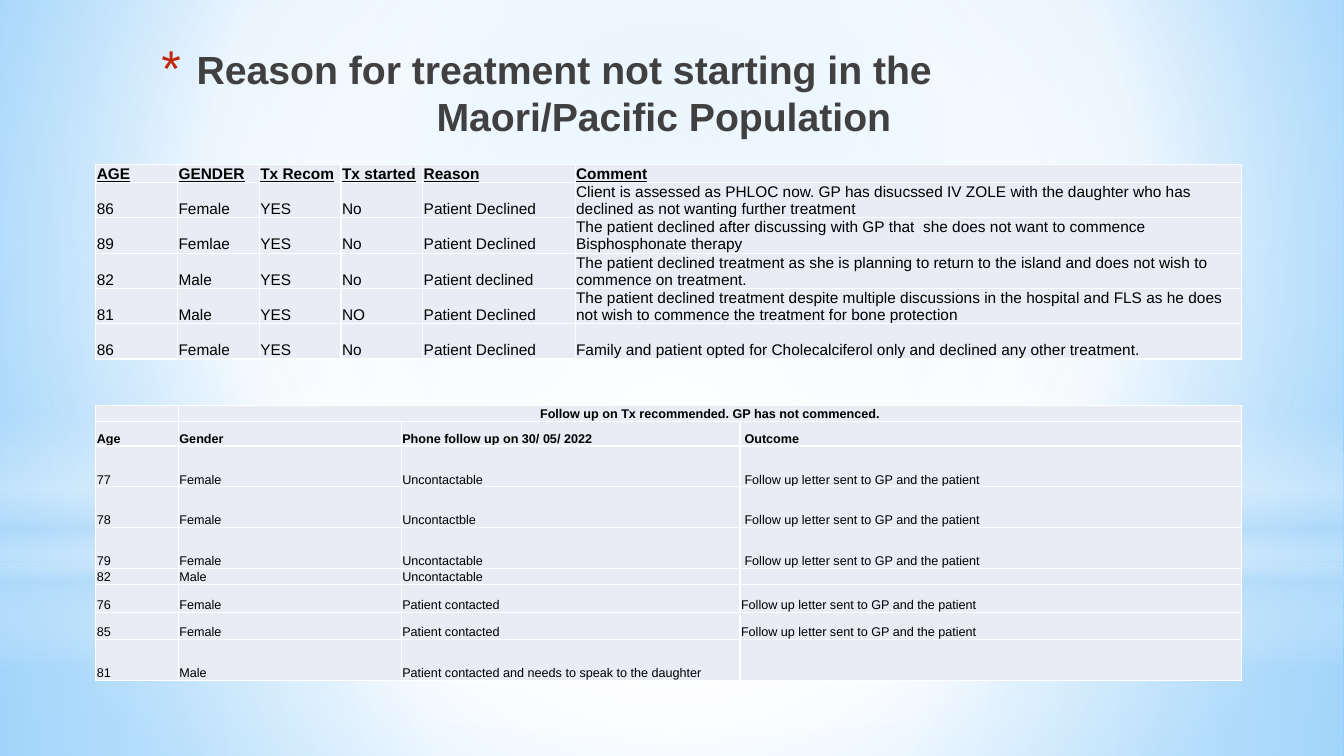
import pptx
import pptx.util
import pptx.dml.color
import pptx.enum.shapes
import pptx.enum.text
import pptx.oxml
import pptx.oxml.ns

COLORS = {"ink": "000000", "title": "404040", "bullet": "C3260C", "cell": "E9EBF5",
          "white": "FFFFFF", "pale": "B4DCFA", "sky": "9ED5FF", "blue": "5BB9FF"}
FONT = "Arial"
WIDTH, HEIGHT = pptx.util.Inches(13.33), pptx.util.Inches(7.5)
CENTRE = (50, 50, 50, 50)

# Boxes are left, top, width, height in percent of the slide.
TITLE_BOX = (11.25, 5.33, 71.27, 74.8)
DECLINED_BOX = (7.13, 21.73, 85.22, 25.6)
FOLLOW_UP_BOX = (7.13, 53.6, 85.22, 35.87)

SKY_STOPS = [(0, "sky", 100), (60, "white", 100), (100, "blue", 100)]
# Shape, box, gradient stops (position, colour, opacity), focus of a radial gradient
PANELS = [
    ("RECTANGLE", (0, 74.4, 100, 25.6),
     [(0, "white", 91), (37, "white", 76), (100, "pale", 79)], CENTRE),
    ("RECTANGLE", (0, 0, 100, 74.4),
     [(0, "white", 89), (48, "white", 62), (100, "pale", 79)], CENTRE),
    ("RECTANGLE", (0, 54.93, 100, 33.33),
     [(0, "white", 0), (29, "white", 30), (45, "pale", 40), (55, "white", 26),
      (65, "pale", 60), (100, "white", 0)], None),
    ("OVAL", (0, 23.33, 100, 74.4), [(0, "white", 100), (56, "white", 0)], CENTRE),
]

DECLINED_COLS = [0.81, 0.81, 0.81, 0.81, 1.51, 6.6]
DECLINED_HEIGHTS = [0.17] + [0.34] * 5
DECLINED = [
    ("AGE", "GENDER", "Tx Recom", "Tx started", "Reason", "Comment"),
    ("86", "Female", "YES", "No", "Patient Declined",
     "Client is assessed as PHLOC now. GP has disucssed IV ZOLE with the daughter who has "
     "declined as not wanting further treatment"),
    ("89", "Femlae", "YES", "No", "Patient Declined",
     "The patient declined after discussing with GP that  she does not want to commence "
     "Bisphosphonate therapy"),
    ("82", "Male", "YES", "No", "Patient declined",
     "The patient declined treatment as she is planning to return to the island and does "
     "not wish to commence on treatment."),
    ("81", "Male", "YES", "NO", "Patient Declined",
     "The patient declined treatment despite multiple discussions in the hospital and FLS "
     "as he does not wish to commence the treatment for bone protection"),
    ("86", "Female", "YES", "No", "Patient Declined",
     "Family and patient opted for Cholecalciferol only and declined any other treatment."),
]

LETTER = "Follow up letter sent to GP and the patient"
FOLLOW_UP_COLS = [0.82, 2.21, 3.36, 4.97]
FOLLOW_UP_HEIGHTS = [0.14, 0.24, 0.4, 0.4, 0.4, 0.14, 0.27, 0.27, 0.4]
FOLLOW_UP = [
    ("", "Follow up on Tx recommended. GP has not commenced.", "", ""),
    ("Age", "Gender", "Phone follow up on 30/ 05/ 2022", " Outcome"),
    ("77", "Female", "Uncontactable", " " + LETTER),
    ("78", "Female", "Uncontactble", " " + LETTER),
    ("79", "Female", "Uncontactable", " " + LETTER),
    ("82", "Male", "Uncontactable", ""),
    ("76", "Female", "Patient contacted", LETTER),
    ("85", "Female", "Patient contacted", LETTER),
    ("81", "Male", "Patient contacted and needs to speak to the daughter", ""),
]


def place(box):
    """Turn a percent box into slide lengths."""
    return [round(share * side / 100) for share, side in zip(box, (WIDTH, HEIGHT) * 2)]


def rgb(name):
    return pptx.dml.color.RGBColor.from_string(COLORS[name])


def xml(text):
    head, tail = text.split(">", 1)
    closing = head.endswith("/")
    return pptx.oxml.parse_xml(
        f'{head.rstrip("/")} {pptx.oxml.ns.nsdecls("a")}{"/" if closing else ""}>{tail}')


def set_gradient(fill, element, stops, focus):
    """Give an element a radial gradient, or a vertical one when focus is None."""
    fill.solid()
    marks = "".join(
        f'<a:gs pos="{pos * 1000}"><a:srgbClr val="{COLORS[name]}">'
        f'<a:alpha val="{alpha * 1000}"/></a:srgbClr></a:gs>' for pos, name, alpha in stops)
    if focus:
        sides = " ".join(f'{side}="{share * 1000}"' for side, share in zip("ltrb", focus))
        way = f'<a:path path="circle"><a:fillToRect {sides}/></a:path>'
    else:
        way = '<a:lin ang="5400000" scaled="0"/>'
    solid = element.xpath(".//a:solidFill")[0]
    solid.getparent().replace(
        solid, xml(f'<a:gradFill rotWithShape="1"><a:gsLst>{marks}</a:gsLst>{way}</a:gradFill>'))


def add_backdrop(s):
    set_gradient(s.background.fill, s.element, SKY_STOPS, (20, 10, 20, 60))
    for kind, box, stops, focus in PANELS:
        sp = s.shapes.add_shape(pptx.enum.shapes.MSO_SHAPE[kind], *place(box))
        sp.shadow.inherit = False
        sp.line.fill.background()
        set_gradient(sp.fill, sp.element, stops, focus)


def format_title(s, box):
    title = s.shapes.title
    s.shapes.element.append(title.element)  # in front of the backdrop
    title.left, title.top, title.width, title.height = place(box)
    tf = title.text_frame
    tf.text = "Reason for treatment not starting in the\nMaori/Pacific Population"
    tf.word_wrap = True
    tf.auto_size = pptx.enum.text.MSO_AUTO_SIZE.NONE
    tf.vertical_anchor = pptx.enum.text.MSO_ANCHOR.TOP
    for p, indent in zip(tf.paragraphs, (0.35, 2.73)):
        p.alignment = pptx.enum.text.PP_ALIGN.LEFT
        p.space_before = pptx.util.Pt(0)
        p.font.size = pptx.util.Pt(28)
        pPr = p._p.get_or_add_pPr()
        pPr.set("marL", str(pptx.util.Inches(indent)))
        r = p.runs[0]
        r.font.name, r.font.size, r.font.bold = FONT, pptx.util.Pt(28), True
        r.font.color.rgb = rgb("title")
    first = tf.paragraphs[0]._p.get_or_add_pPr()
    first.set("indent", str(-pptx.util.Inches(0.35)))
    bullet = [f'<a:buClr><a:srgbClr val="{COLORS["bullet"]}"/></a:buClr>',
              '<a:buSzPct val="128000"/>', f'<a:buFont typeface="{FONT}"/>',
              '<a:buChar char="*"/>']
    for offset, part in enumerate(bullet):
        first.insert(len(first.xpath("a:lnSpc|a:spcBef|a:spcAft")) + offset, xml(part))


def format_cell(cell, text, size, bold, underline):
    cell.text = text
    inset = pptx.util.Inches(0.01)
    cell.margin_left = cell.margin_right = cell.margin_top = inset
    cell.margin_bottom = 0
    cell.vertical_anchor = pptx.enum.text.MSO_ANCHOR.BOTTOM
    tcPr = cell._tc.get_or_add_tcPr()
    for side in "LRTB":
        tcPr.append(xml(f'<a:ln{side} w="12700"><a:solidFill><a:srgbClr val="{COLORS["white"]}"/>'
                        f'</a:solidFill></a:ln{side}>'))
    cell.fill.solid()
    cell.fill.fore_color.rgb = rgb("cell")
    p = cell.text_frame.paragraphs[0]
    for r in p.runs:
        r.font.name, r.font.size = FONT, pptx.util.Pt(size)
        r.font.bold, r.font.underline = bold, underline
        r.font.color.rgb = rgb("ink")
    if not text:
        p._p.append(xml(f'<a:endParaRPr sz="{size * 100}"/>'))


def add_patient_table(s, box, rows, cols, heights, size, header_rows, underline=False):
    """Spread columns and rows over the box in the given proportions."""
    left, top, width, height = place(box)
    table = s.shapes.add_table(len(rows), len(cols), left, top, width, height).table
    table.first_row = table.horz_banding = False
    for column, share in zip(table.columns, cols):
        column.width = round(width * share / sum(cols))
    for row, share in zip(table.rows, heights):
        row.height = round(height * share / sum(heights))
    for i, row in enumerate(rows):
        header = i < header_rows
        for j, text in enumerate(row):
            format_cell(table.cell(i, j), text, size, header, header and underline)
    return table


def build_slide(prs):
    s = prs.slides.add_slide(prs.slide_layouts.get_by_name("Title Only"))
    add_backdrop(s)
    format_title(s, TITLE_BOX)
    add_patient_table(s, DECLINED_BOX, DECLINED, DECLINED_COLS, DECLINED_HEIGHTS,
                      size=11, header_rows=1, underline=True)
    follow_up = add_patient_table(s, FOLLOW_UP_BOX, FOLLOW_UP, FOLLOW_UP_COLS,
                                  FOLLOW_UP_HEIGHTS, size=9, header_rows=2)
    heading = follow_up.cell(0, 1)
    heading.merge(follow_up.cell(0, 3))
    heading.text_frame.paragraphs[0].alignment = pptx.enum.text.PP_ALIGN.CENTER


def main():
    prs = pptx.Presentation()
    prs.slide_width, prs.slide_height = WIDTH, HEIGHT
    build_slide(prs)
    prs.save("out.pptx")


if __name__ == "__main__":
    main()
